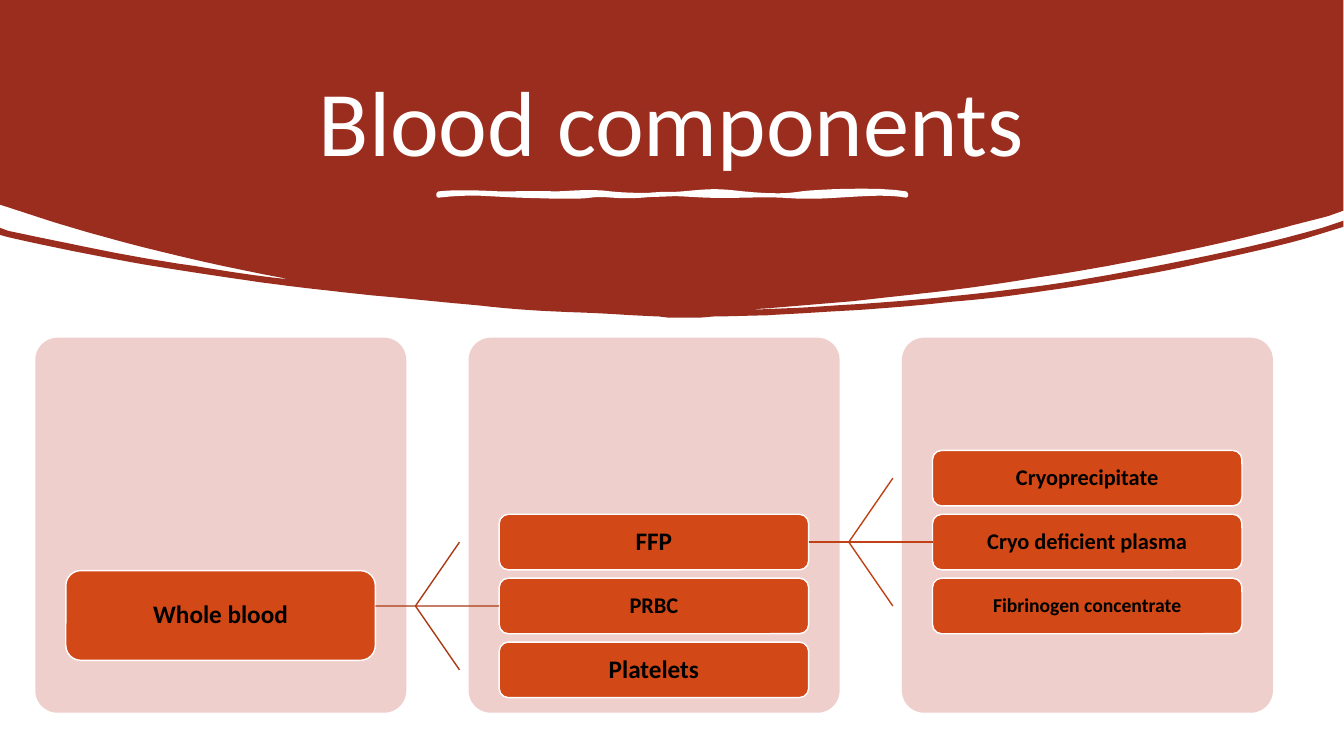
from lxml import etree
from pptx import Presentation
from pptx.dml.color import RGBColor
from pptx.enum.shapes import MSO_CONNECTOR, MSO_SHAPE
from pptx.enum.text import MSO_ANCHOR, PP_ALIGN
from pptx.oxml.ns import qn
from pptx.util import Cm, Pt

ROUNDED = MSO_SHAPE.ROUNDED_RECTANGLE
STRAIGHT = MSO_CONNECTOR.STRAIGHT
MIDDLE = MSO_ANCHOR.MIDDLE
CENTER = PP_ALIGN.CENTER
LEFT_SIDE, RIGHT_SIDE = 1, 3
COLORS = {key: RGBColor.from_string(value) for key, value in {
    "header": "9B2D1F", "white": "FFFFFF", "panel": "EFCFCC", "component": "D34817",
    "text": "000000", "first split": "A93A12", "second split": "BF4115"}.items()}

prs = Presentation()
prs.slide_width, prs.slide_height = Cm(33.87), Cm(19.05)
slide = prs.slides.add_slide(prs.slide_layouts[5])
shapes = slide.shapes


def draw_outline(steps, color):
    """Closed outline on a 2.54 cm grid: 2 numbers make a line, 6 make a Bezier curve."""
    pen = steps[0]
    points = [pen]
    for step in steps[1:]:
        if len(step) == 2:
            points.append(step)
        else:
            x1, y1, x2, y2, x3, y3 = step
            for t in (i / 8 for i in range(1, 9)):
                u = 1 - t
                weights = (u ** 3, 3 * u * u * t, 3 * u * t * t, t ** 3)
                points.append((sum(w * x for w, x in zip(weights, (pen[0], x1, x2, x3))),
                               sum(w * y for w, y in zip(weights, (pen[1], y1, y2, y3)))))
        pen = points[-1]
    grid = [(round(x * 1000), round(y * 1000)) for x, y in points]
    builder = shapes.build_freeform(*grid[0], scale=Cm(2.54) / 1000)
    builder.add_line_segments(grid[1:], close=True)
    outline = builder.convert_to_shape()
    outline.shadow.inherit = False
    outline.fill.solid()
    outline.fill.fore_color.rgb = color
    outline.line.fill.background()
    return outline


def draw_link(x1, y1, x2, y2, color):
    link = shapes.add_connector(STRAIGHT, Cm(x1), Cm(y1), Cm(x2), Cm(y2))
    link.line.color.rgb = color
    link.line.width = Pt(1)
    etree.SubElement(link._element.spPr, qn("a:effectLst"))
    return link


# Curved header with its two sweeping edges
header = draw_outline([
    (0, 0), (13.33, 0), (13.33, 2.09), (13.19, 2.14),
    (13.05, 2.18, 12.91, 2.21, 12.77, 2.25), (12.32, 2.37, 11.86, 2.47, 11.4, 2.56),
    (11.04, 2.63, 10.67, 2.7, 10.31, 2.75), (9.96, 2.81, 9.6, 2.86, 9.25, 2.9),
    (8.98, 2.93, 8.71, 2.96, 8.44, 2.99), (7.6, 3.06), (7.43, 3.07), (7.53, 3.07),
    (7.78, 3.06, 8.04, 3.05, 8.29, 3.03), (8.67, 3.01, 9.05, 2.98, 9.43, 2.94),
    (9.74, 2.91, 10.06, 2.87, 10.37, 2.83), (10.79, 2.77, 11.21, 2.69, 11.62, 2.61),
    (12.13, 2.51, 12.63, 2.4, 13.12, 2.26), (13.33, 2.19), (13.33, 2.25), (12.94, 2.37),
    (12.61, 2.46, 12.29, 2.53, 11.96, 2.6), (11.62, 2.68, 11.27, 2.74, 10.92, 2.8),
    (10.63, 2.85, 10.34, 2.89, 10.05, 2.93), (9.83, 2.96, 9.6, 2.98, 9.38, 3),
    (9.12, 3.03, 8.86, 3.05, 8.6, 3.07), (8.26, 3.09, 7.92, 3.11, 7.58, 3.13),
    (7.42, 3.13, 7.25, 3.14, 7.08, 3.14), (6.96, 3.15), (6.62, 3.15), (6.54, 3.14),
    (6.28, 3.13, 6.02, 3.11, 5.76, 3.1), (5.42, 3.09, 5.09, 3.07, 4.75, 3.03),
    (4.4, 3, 4.04, 2.96, 3.69, 2.93), (3.32, 2.89, 2.95, 2.85, 2.58, 2.8),
    (2.17, 2.74, 1.76, 2.68, 1.35, 2.61), (0.92, 2.53, 0.5, 2.45, 0.07, 2.35),
    (0, 2.33), (0, 2.26), (0.08, 2.29),
    (0.27, 2.33, 0.46, 2.37, 0.66, 2.41), (1.08, 2.5, 1.51, 2.58, 1.94, 2.64),
    (2.24, 2.69, 2.55, 2.74, 2.86, 2.77), (2.82, 2.76),
    (2.28, 2.66, 1.75, 2.54, 1.22, 2.4), (0.96, 2.33, 0.71, 2.26, 0.46, 2.18),
    (0, 2.03)], COLORS["header"])

# Title, moved in front of the header
title = shapes.title
title.left, title.top, title.width, title.height = Cm(1.78), Cm(1.09), Cm(30.3), Cm(4.19)
header._element.addnext(title._element)
title.text_frame.vertical_anchor = MIDDLE
heading = title.text_frame.paragraphs[0]
heading.alignment = CENTER
heading.line_spacing = 0.9
heading_run = heading.add_run()
heading_run.text = "Blood components"
heading_run.font.size = Pt(66)
heading_run.font.name = "Calibri"
heading_run.font.color.rgb = COLORS["white"]

# Hand-drawn underline
underline = draw_outline([
    (4.35, 1.92), (4.52, 1.9, 4.76, 1.91, 4.96, 1.92), (5.17, 1.92, 5.34, 1.91, 5.49, 1.92),
    (5.64, 1.92, 5.83, 1.89, 6.06, 1.92), (6.28, 1.94, 6.44, 1.94, 6.77, 1.92),
    (7.09, 1.89, 7.1, 1.89, 7.38, 1.92), (7.67, 1.95, 7.82, 1.94, 7.95, 1.92),
    (8.08, 1.9, 8.73, 1.87, 8.99, 1.92), (8.99, 1.94),
    (8.84, 1.91, 8.64, 1.92, 8.32, 1.94), (8.01, 1.96, 7.91, 1.95, 7.75, 1.94),
    (7.6, 1.93, 7.21, 1.95, 7, 1.94), (6.78, 1.93, 6.63, 1.91, 6.38, 1.94),
    (6.13, 1.96, 5.99, 1.92, 5.86, 1.94), (5.73, 1.96, 5.49, 1.95, 5.15, 1.94),
    (4.81, 1.93, 4.72, 1.9, 4.35, 1.94)], COLORS["white"])
underline.line.color.rgb = COLORS["white"]
underline.line.width = Pt(3)

# Three stages: top of first component, component height, names with text sizes
STAGES = [
    (14.38, 2.26, [("Whole blood", 18)]),
    (12.96, 1.4, [("FFP", 18), ("PRBC", 16), ("Platelets", 18)]),
    (11.35, 1.4, [("Cryoprecipitate", 16), ("Cryo deficient plasma", 16),
                  ("Fibrinogen concentrate", 14)]),
]
STAGE_LEFT, STAGE_PITCH, ROW_PITCH = 0.89, 10.92, 1.61
components = {}
for stage, (first_top, height, names) in enumerate(STAGES):
    left = STAGE_LEFT + stage * STAGE_PITCH
    panel = shapes.add_shape(ROUNDED, Cm(left), Cm(8.51), Cm(9.35), Cm(9.45))
    panel.adjustments[0] = 0.06
    panel.shadow.inherit = False
    panel.fill.solid()
    panel.fill.fore_color.rgb = COLORS["panel"]
    panel.line.fill.background()

    for row, (name, size) in enumerate(names):
        component = shapes.add_shape(ROUNDED, Cm(left + 0.77), Cm(first_top + row * ROW_PITCH),
                                     Cm(7.8), Cm(height))
        component.shadow.inherit = False
        component.fill.solid()
        component.fill.fore_color.rgb = COLORS["component"]
        component.line.color.rgb = COLORS["white"]
        component.line.width = Pt(1)
        frame = component.text_frame
        frame.word_wrap = True
        frame.vertical_anchor = MIDDLE
        frame.margin_left = frame.margin_right = frame.margin_top = frame.margin_bottom = Cm(0.08)
        label = frame.paragraphs[0]
        label.alignment = CENTER
        label.line_spacing = 0.9
        label_run = label.add_run()
        label_run.text = name
        label_run.font.size = Pt(size)
        label_run.font.name = "Calibri"
        label_run.font.bold = True
        label_run.font.color.rgb = COLORS["text"]
        components[name] = component

# Splits: a trunk to the middle component and a branch above and below
for stage, (y, target, color) in enumerate([(15.27, "PRBC", "first split"),
                                            (13.66, "Cryo deficient plasma", "second split")]):
    left = STAGE_LEFT + stage * STAGE_PITCH
    trunk = draw_link(left + 8.57, y, left + 11.69, y, COLORS[color])
    if target == "Cryo deficient plasma":
        trunk.begin_connect(components["FFP"], RIGHT_SIDE)
    trunk.end_connect(components[target], LEFT_SIDE)
    for rise in (-ROW_PITCH, ROW_PITCH):
        draw_link(left + 9.58, y, left + 10.69, y + rise, COLORS[color])

prs.save("out.pptx")
